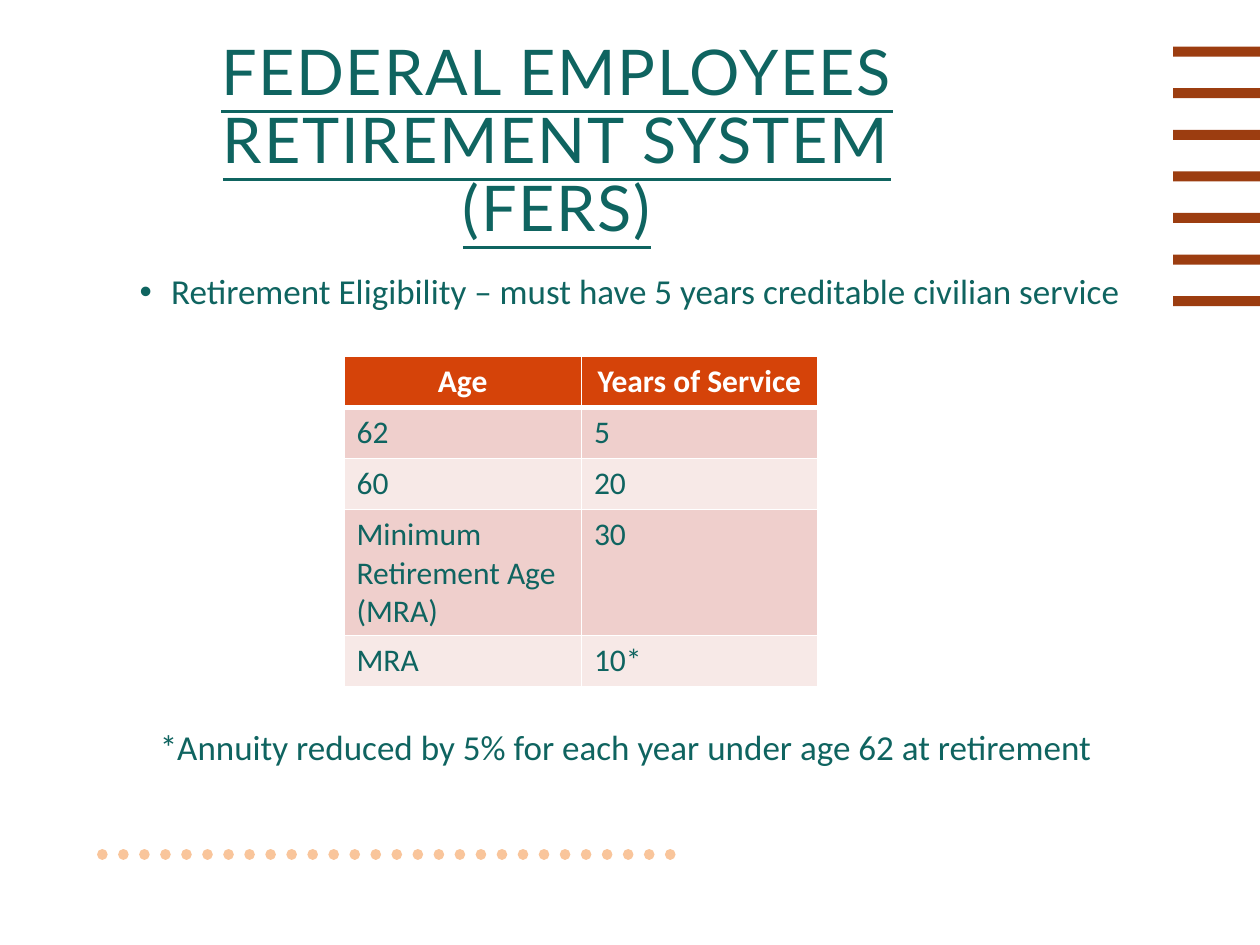
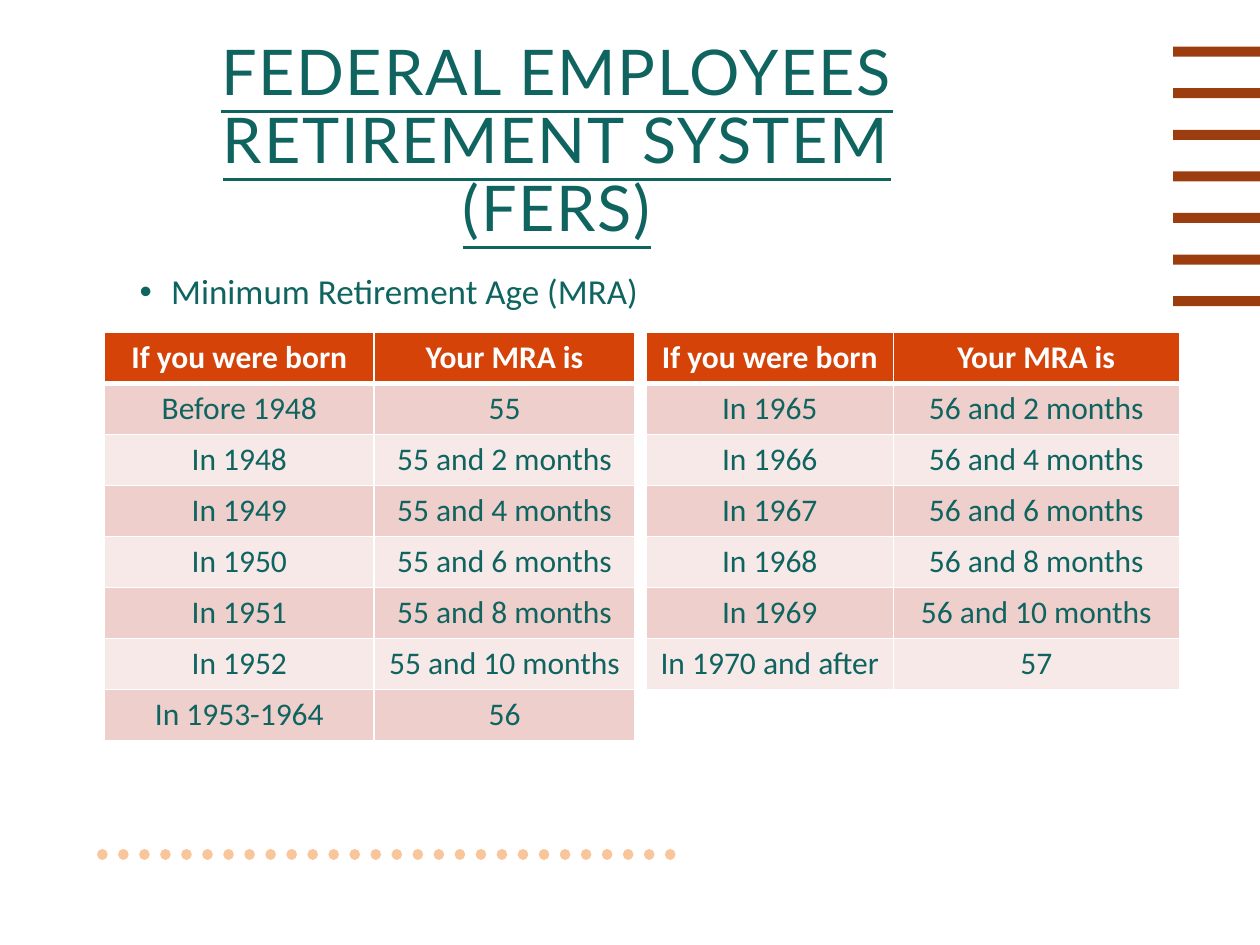
from dataclasses import dataclass
from typing import Optional

import lxml.etree
import pptx
import pptx.dml.color
import pptx.enum.dml
import pptx.enum.shapes
import pptx.enum.text
import pptx.oxml.ns
import pptx.slide
import pptx.util

COLORS = {
    "text": "0F6460",
    "bar": "9C3D10",
    "dots": "F9C59B",
    "header": "D54309",
    "odd_row": "EFCFCC",
    "even_row": "F7E9E7",
    "white": "FFFFFF",
}
WIDTH = pptx.util.Inches(10)
HEIGHT = pptx.util.Inches(7.5)
GRID_COLUMNS = 100
GRID_ROWS = 75
ROW_HEIGHT = 4.05
BAR_COUNT = 7
BAR_PITCH = 3.3
TITLE = "FEDERAL EMPLOYEES RETIREMENT SYSTEM (FERS)"
CENTER = pptx.enum.text.PP_ALIGN.CENTER
LEFT = pptx.enum.text.PP_ALIGN.LEFT


@dataclass(frozen=True)
class TextBlock:
    text: str
    left: float
    top: float
    width: float
    height: float
    size: int = 20
    font: str = "Calibri"
    align: pptx.enum.text.PP_ALIGN = LEFT
    line_spacing: Optional[float] = None
    bullet: bool = False


@dataclass(frozen=True)
class TableBlock:
    left: float
    top: float
    column_widths: tuple[float, ...]
    rows: tuple[tuple[str, ...], ...]
    body_align: pptx.enum.text.PP_ALIGN = CENTER


def across(columns: float) -> int:
    return round(WIDTH * columns / GRID_COLUMNS)


def down(rows: float) -> int:
    return round(HEIGHT * rows / GRID_ROWS)


def color(name: str) -> pptx.dml.color.RGBColor:
    return pptx.dml.color.RGBColor.from_string(COLORS[name])


def add_child(parent, tag: str, **attributes: str):
    return lxml.etree.SubElement(parent, pptx.oxml.ns.qn(tag), attributes)


def set_font(paragraph, name: str, size: int, color_name: str, bold: bool = False) -> None:
    paragraph.font.name = name
    paragraph.font.size = pptx.util.Pt(size)
    paragraph.font.bold = bold
    paragraph.font.color.rgb = color(color_name)


def add_bullet(paragraph) -> None:
    properties = paragraph._p.get_or_add_pPr()
    indent = pptx.util.Inches(0.25)
    properties.set("marL", str(indent))
    properties.set("indent", str(-indent))
    add_child(properties, "a:buFont", typeface="Arial")
    add_child(properties, "a:buChar", char="•")


def draw_text(slide: pptx.slide.Slide, block: TextBlock):
    shape = slide.shapes.add_textbox(
        across(block.left), down(block.top), across(block.width), down(block.height)
    )
    shape.text_frame.word_wrap = True
    paragraph = shape.text_frame.paragraphs[0]
    paragraph.text = block.text
    paragraph.alignment = block.align
    if block.line_spacing:
        paragraph.line_spacing = block.line_spacing
    if block.bullet:
        add_bullet(paragraph)
    set_font(paragraph, block.font, block.size, "text")
    return shape


def draw_title(slide: pptx.slide.Slide) -> None:
    block = TextBlock(TITLE, 10.1, 6.8, 68.2, 14.5, 36, "Lato", CENTER, 0.9)
    frame = draw_text(slide, block).text_frame
    frame.vertical_anchor = pptx.enum.text.MSO_ANCHOR.MIDDLE
    frame.margin_bottom = down(5.9)
    paragraph = frame.paragraphs[0]
    paragraph.font.underline = True
    paragraph.runs[0]._r.get_or_add_rPr().set("spc", "100")


def draw_bullet(slide: pptx.slide.Slide, text: str) -> None:
    draw_text(slide, TextBlock(text, 10.1, 21.3, 81, 42.5, line_spacing=0.9, bullet=True))


def draw_bars(slide: pptx.slide.Slide) -> None:
    for index in range(BAR_COUNT):
        bar = slide.shapes.add_shape(
            pptx.enum.shapes.MSO_SHAPE.RECTANGLE,
            across(93.1), down(3.7 + index * BAR_PITCH), across(6.9), down(0.8),
        )
        bar.shadow.inherit = False
        bar.fill.solid()
        bar.fill.fore_color.rgb = color("bar")
        bar.line.fill.background()


def draw_dotted_line(slide: pptx.slide.Slide) -> None:
    connector = slide.shapes.add_connector(
        pptx.enum.shapes.MSO_CONNECTOR.STRAIGHT,
        across(53.2), down(67.8), across(8), down(67.8),
    )
    connector.line.color.rgb = color("dots")
    connector.line.width = pptx.util.Pt(6)
    connector.line.dash_style = pptx.enum.dml.MSO_LINE.ROUND_DOT
    properties = connector.element.spPr
    properties.find(pptx.oxml.ns.qn("a:ln")).set("cap", "rnd")
    add_child(properties, "a:effectLst")


def set_borders(cell, bottom_points: int) -> None:
    properties = cell._tc.get_or_add_tcPr()
    for side in "LRTB":
        points = bottom_points if side == "B" else 1
        line = add_child(properties, f"a:ln{side}", w=str(pptx.util.Pt(points)))
        add_child(add_child(line, "a:solidFill"), "a:srgbClr", val=COLORS["white"])


def draw_table(slide: pptx.slide.Slide, block: TableBlock) -> None:
    table = slide.shapes.add_table(
        len(block.rows), len(block.column_widths),
        across(block.left), down(block.top),
        across(sum(block.column_widths)), down(ROW_HEIGHT * len(block.rows)),
    ).table
    for column, width in zip(table.columns, block.column_widths):
        column.width = across(width)
    for row_index, texts in enumerate(block.rows):
        table.rows[row_index].height = down(ROW_HEIGHT)
        is_header = row_index == 0
        fill = "header" if is_header else "odd_row" if row_index % 2 else "even_row"
        for column_index, text in enumerate(texts):
            cell = table.cell(row_index, column_index)
            set_borders(cell, 3 if is_header else 1)
            cell.fill.solid()
            cell.fill.fore_color.rgb = color(fill)
            paragraph = cell.text_frame.paragraphs[0]
            paragraph.text = text
            paragraph.alignment = CENTER if is_header else block.body_align
            set_font(paragraph, "Calibri", 18, "white" if is_header else "text", is_header)


def add_retirement_slide(presentation, bullet: str, tables: tuple[TableBlock, ...]):
    slide = presentation.slides.add_slide(presentation.slide_layouts[6])
    draw_bars(slide)
    draw_dotted_line(slide)
    draw_title(slide)
    draw_bullet(slide, bullet)
    for table in tables:
        draw_table(slide, table)
    return slide


ELIGIBILITY = TableBlock(27.3, 28.3, (18.85, 18.75), (
    ("Age", "Years of Service"),
    ("62", "5"),
    ("60", "20"),
    ("Minimum Retirement Age (MRA)", "30"),
    ("MRA", "10*"),
), LEFT)

MRA_HEADER = ("If you were born", "Your MRA is")
MRA_EARLIER = TableBlock(8.3, 26.4, (21.4, 20.7), (
    MRA_HEADER,
    ("Before 1948", "55"),
    ("In 1948", "55 and 2 months"),
    ("In 1949", "55 and 4 months"),
    ("In 1950", "55 and 6 months"),
    ("In 1951", "55 and 8 months"),
    ("In 1952", "55 and 10 months"),
    ("In 1953-1964", "56"),
))
MRA_LATER = TableBlock(51.3, 26.4, (19.6, 22.7), (
    MRA_HEADER,
    ("In 1965", "56 and 2 months"),
    ("In 1966", "56 and 4 months"),
    ("In 1967", "56 and 6 months"),
    ("In 1968", "56 and 8 months"),
    ("In 1969", "56 and 10 months"),
    ("In 1970 and after", "57"),
))
REDUCTION_NOTE = TextBlock(
    "*Annuity reduced by 5% for each year under age 62 at retirement", 11.7, 57.1, 80, 4.4
)


def main() -> None:
    presentation = pptx.Presentation()
    presentation.slide_width = WIDTH
    presentation.slide_height = HEIGHT
    eligibility_slide = add_retirement_slide(
        presentation,
        "Retirement Eligibility – must have 5 years creditable civilian service",
        (ELIGIBILITY,),
    )
    draw_text(eligibility_slide, REDUCTION_NOTE)
    add_retirement_slide(
        presentation, "Minimum Retirement Age (MRA)", (MRA_EARLIER, MRA_LATER)
    )
    presentation.save("out.pptx")


if __name__ == "__main__":
    main()
